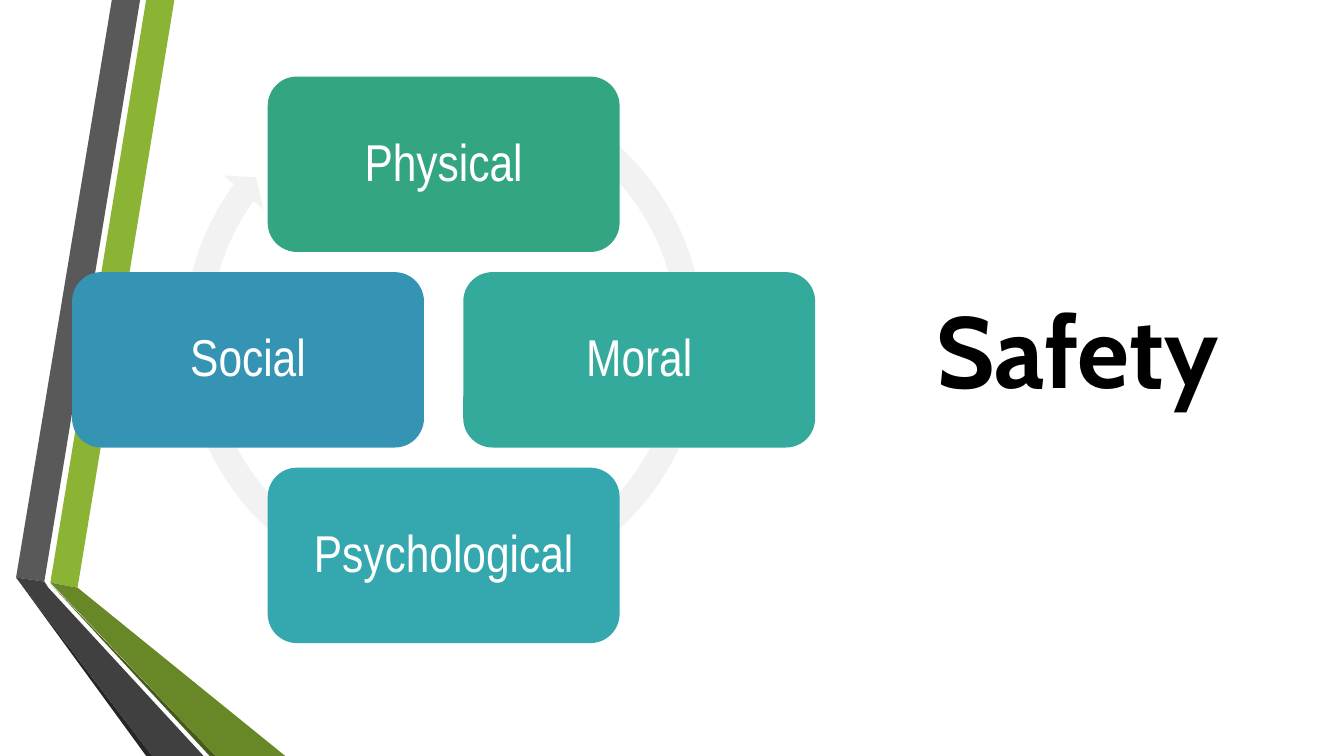
from dataclasses import dataclass

import pptx
import pptx.dml.color
import pptx.enum.shapes
import pptx.enum.text
import pptx.util

Inches = pptx.util.Inches
SHAPES = pptx.enum.shapes.MSO_SHAPE
CENTER = pptx.enum.text.PP_ALIGN.CENTER
MIDDLE = pptx.enum.text.MSO_ANCHOR.MIDDLE

# Cycle geometry, in inches
CYCLE_X, CYCLE_Y = 4.4, 3.57
CYCLE_STEP = 1.94
BOX_WIDTH, BOX_HEIGHT = 3.49, 1.74
ARROW_SIZE = 5.42


@dataclass
class Ribbon:
    color: str
    points: list[tuple[float, float]]


@dataclass
class SafetyBox:
    label: str
    color: str
    column: int
    row: int


RIBBONS = [
    Ribbon("8BB434", [(0.5, 5.78), (0.77, 5.83), (1.73, 0), (1.45, 0)]),
    Ribbon("595959", [(1.39, 0), (1.11, 0), (0.16, 5.73), (0.44, 5.77)]),
    Ribbon("262626", [(0.16, 5.73), (1.45, 7.5), (1.51, 7.5)]),
    Ribbon("465A1A", [(0.5, 5.79), (2.08, 7.5), (2.14, 7.5)]),
    Ribbon("688727", [(0.5, 5.78), (2.14, 7.5), (2.83, 7.5), (0.77, 5.83)]),
    Ribbon("404040", [(2.02, 7.5), (0.48, 5.83), (0.44, 5.77), (0.16, 5.73), (1.51, 7.5)]),
]

# Column and row count steps from the centre of the cycle
BOXES = [
    SafetyBox("Physical", "33A583", 0, -1),
    SafetyBox("Moral", "34AA9C", 1, 0),
    SafetyBox("Psychological", "34A7AF", 0, 1),
    SafetyBox("Social", "3594B4", -1, 0),
]


def fill_shape(shape, color: str) -> None:
    shape.shadow.inherit = False
    shape.fill.solid()
    shape.fill.fore_color.rgb = pptx.dml.color.RGBColor.from_string(color)
    shape.line.fill.background()


def write_text(shape, text: str, font_name: str, size: float, color: str, bold: bool) -> None:
    text_frame = shape.text_frame
    text_frame.text = text
    text_frame.word_wrap = True
    text_frame.vertical_anchor = MIDDLE
    paragraph = text_frame.paragraphs[0]
    paragraph.alignment = CENTER
    font = paragraph.runs[0].font
    font.name = font_name
    font.size = pptx.util.Pt(size)
    font.bold = bold
    font.color.rgb = pptx.dml.color.RGBColor.from_string(color)


def draw_ribbon(slide, ribbon: Ribbon) -> None:
    points = [(Inches(x), Inches(y)) for x, y in ribbon.points]
    builder = slide.shapes.build_freeform(*points[0])
    builder.add_line_segments(points[1:], close=True)
    fill_shape(builder.convert_to_shape(), ribbon.color)


def draw_centered(slide, kind, x: float, y: float, width: float, height: float, color: str):
    shape = slide.shapes.add_shape(
        kind, Inches(x - width / 2), Inches(y - height / 2), Inches(width), Inches(height)
    )
    fill_shape(shape, color)
    return shape


def draw_cycle_arrow(slide) -> None:
    arrow = draw_centered(
        slide, SHAPES.CIRCULAR_ARROW, CYCLE_X, 3.35, ARROW_SIZE, ARROW_SIZE, "F2F2F2"
    )
    for index, value in enumerate([0.047, 2.729, 129.593, 179.442, 0.048]):
        arrow.adjustments[index] = value


def draw_box(slide, box: SafetyBox) -> None:
    x = CYCLE_X + box.column * CYCLE_STEP
    y = CYCLE_Y + box.row * CYCLE_STEP
    shape = draw_centered(
        slide, SHAPES.ROUNDED_RECTANGLE, x, y, BOX_WIDTH, BOX_HEIGHT, box.color
    )
    write_text(shape, box.label, "Arial Narrow", 37, "FFFFFF", False)
    shape.text_frame.paragraphs[0].line_spacing = 0.9


def place_title(slide) -> None:
    title = slide.shapes.title
    title.left, title.top = Inches(8.79), Inches(0.75)
    title.width, title.height = Inches(3.79), Inches(5.4)
    write_text(title, "Safety", "Cabin", 72, "000000", True)


def main() -> None:
    presentation = pptx.Presentation()
    presentation.slide_width = Inches(13.33)
    presentation.slide_height = Inches(7.5)
    slide = presentation.slides.add_slide(presentation.slide_layouts[5])

    # Folded ribbons on the left edge
    for ribbon in RIBBONS:
        draw_ribbon(slide, ribbon)

    # Cycle of safety aspects
    draw_cycle_arrow(slide)
    for box in BOXES:
        draw_box(slide, box)

    place_title(slide)
    presentation.save("out.pptx")


if __name__ == "__main__":
    main()
